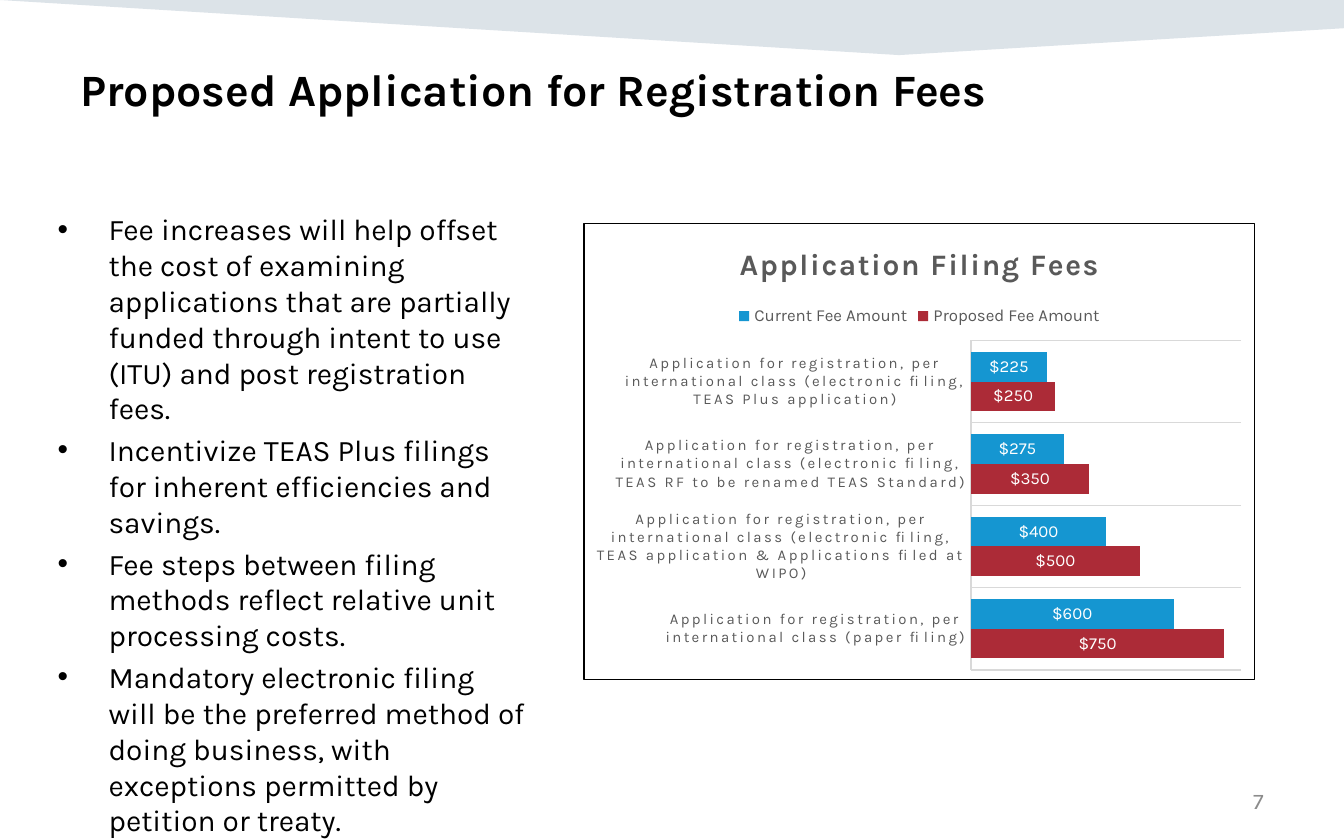
from lxml import etree
from pptx import Presentation
from pptx.chart.data import CategoryChartData
from pptx.dml.color import RGBColor
from pptx.enum.chart import XL_CHART_TYPE, XL_LABEL_POSITION, XL_LEGEND_POSITION, XL_TICK_MARK
from pptx.enum.text import MSO_ANCHOR, PP_ALIGN
from pptx.oxml import parse_xml
from pptx.oxml.ns import nsdecls, qn
from pptx.util import Inches, Pt

FONT = "Karla"
BLACK = RGBColor(0, 0, 0)
WHITE = RGBColor(255, 255, 255)
NAVY = RGBColor(0x16, 0x44, 0x69)
GRAY = RGBColor(0x59, 0x59, 0x59)
PAGE_GRAY = RGBColor(0x8C, 0x8C, 0x8C)
GRID_GRAY = RGBColor(0xD9, 0xD9, 0xD9)
RED = RGBColor(0xAC, 0x2B, 0x37)
BLUE = RGBColor(0x15, 0x96, 0xD1)

TITLE = "Proposed Application for Registration Fees"
PAGE = "7"
POINTS = [
    "Fee increases will help offset the cost of examining applications that are partially "
    "funded through intent to use (ITU) and post registration fees.",
    "Incentivize TEAS Plus filings for inherent efficiencies and savings.",
    "Fee steps between filing methods reflect relative unit processing costs.",
    "Mandatory electronic filing will be the preferred method of doing business, with "
    "exceptions permitted by petition or treaty.",
]
CHART_TITLE = "Application Filing Fees"
CLASS = "Application for registration, per international class "
FILINGS = [
    "(paper filing)",
    "(electronic filing, TEAS application & Applications filed at WIPO)",
    "(electronic filing, TEAS RF to be renamed TEAS Standard)",
    "(electronic filing, TEAS Plus application)",
]
FEES = [
    ("Proposed Fee Amount", RED, (750, 500, 350, 250)),
    ("Current Fee Amount", BLUE, (600, 400, 275, 225)),
]
DOLLARS = '"$"#,##0'
BAND = [(0, 0), (10, 0), (10, 0.21), (6.69, 0.41)]
PLOT_SHARES = {"x": 0.577, "y": 0.256, "w": 0.403, "h": 0.724}


def style(font, size, color, bold=False):
    font.name, font.size, font.bold = FONT, Pt(size), bold
    font.color.rgb = color


def add_text(slide, area, paragraphs, size, color, bold=False):
    frame = slide.shapes.add_textbox(*map(Inches, area)).text_frame
    frame.word_wrap = True
    for index, words in enumerate(paragraphs):
        paragraph = frame.paragraphs[0] if index == 0 else frame.add_paragraph()
        run = paragraph.add_run()
        run.text = words
        style(run.font, size, color, bold)
    return frame


def add_band(slide):
    builder = slide.shapes.build_freeform(*map(Inches, BAND[0]), scale=1.0)
    builder.add_line_segments([(Inches(x), Inches(y)) for x, y in BAND[1:]], close=True)
    band = builder.convert_to_shape()
    band.shadow.inherit = False
    band.line.fill.background()
    band.fill.solid()
    band.fill.fore_color.rgb = NAVY
    color = band.fill._xPr.find(qn("a:solidFill"))[0]
    etree.SubElement(color, qn("a:alpha")).set("val", "15000")


def add_bullets(frame):
    indent = Inches(0.38)
    for index, paragraph in enumerate(frame.paragraphs):
        props = paragraph._p.get_or_add_pPr()
        props.set("marL", str(indent))
        props.set("indent", str(-indent))
        etree.SubElement(props, qn("a:buFont")).set("typeface", "Arial")
        etree.SubElement(props, qn("a:buChar")).set("char", "•")
        if index:
            paragraph.space_before = Pt(3.2)


def set_plot_area(chart):
    """Fix the inner plot area at shares of the chart's size."""
    plot_area = chart._chartSpace.chart.plotArea
    for layout in plot_area.findall(qn("c:layout")):
        plot_area.remove(layout)
    modes = '<c:xMode val="edge"/><c:yMode val="edge"/>'
    sizes = "".join(f'<c:{key} val="{share}"/>' for key, share in PLOT_SHARES.items())
    plot_area.insert(0, parse_xml(
        f'<c:layout {nsdecls("c")}><c:manualLayout><c:layoutTarget val="inner"/>'
        f"{modes}{sizes}</c:manualLayout></c:layout>"))


def add_border(chart):
    border = parse_xml(
        f'<c:spPr {nsdecls("c", "a")}><a:noFill/><a:ln w="{Pt(0.75)}"><a:solidFill>'
        f'<a:srgbClr val="{BLACK}"/></a:solidFill></a:ln></c:spPr>')
    chart._chartSpace.chart.addnext(border)


def add_fee_chart(slide):
    data = CategoryChartData(number_format=DOLLARS)
    data.categories = [CLASS + filing for filing in FILINGS]
    for name, _, amounts in FEES:
        data.add_series(name, amounts)
    chart = slide.shapes.add_chart(
        XL_CHART_TYPE.BAR_CLUSTERED, *map(Inches, (4.34, 1.66, 5, 3.4)), data).chart
    style(chart.font, 10, BLACK)

    chart.has_title = True
    heading = chart.chart_title.text_frame.paragraphs[0].add_run()
    heading.text = CHART_TITLE
    style(heading.font, 16, GRAY, bold=True)
    heading.font._element.set("spc", "100")
    chart.chart_title.include_in_layout = False

    chart.has_legend = True
    chart.legend.position = XL_LEGEND_POSITION.TOP
    chart.legend.include_in_layout = False
    style(chart.legend.font, 9, GRAY)

    filings = chart.category_axis
    filings.major_tick_mark = filings.minor_tick_mark = XL_TICK_MARK.NONE
    filings.has_major_gridlines = True
    for line in (filings.format.line, filings.major_gridlines.format.line):
        line.color.rgb, line.width = GRID_GRAY, Pt(0.75)
    style(filings.tick_labels.font, 8, GRAY)
    filings.tick_labels.font._element.set("spc", "120")

    amounts_axis = chart.value_axis
    amounts_axis.has_major_gridlines = False
    amounts_axis.minimum_scale, amounts_axis.maximum_scale = 0, 800
    amounts_axis.visible = False

    plot = chart.plots[0]
    plot.gap_width, plot.overlap, plot.vary_by_categories = 79, 0, False
    for series, (_, color, _) in zip(plot.series, FEES):
        series.format.fill.solid()
        series.format.fill.fore_color.rgb = color
        labels = series.data_labels
        labels.show_value = True
        labels.position = XL_LABEL_POSITION.CENTER
        labels.number_format, labels.number_format_is_linked = DOLLARS, False
        style(labels.font, 9, WHITE)
    set_plot_area(chart)
    add_border(chart)


def main():
    deck = Presentation()
    deck.slide_width, deck.slide_height = Inches(10), Inches(6.25)
    slide = deck.slides.add_slide(deck.slide_layouts[6])
    add_band(slide)
    add_text(slide, (0.5, 0.41, 9, 0.51), [TITLE], 24, BLACK, bold=True)
    page = add_text(slide, (7.17, 5.79, 2.33, 0.33), [PAGE], 12, PAGE_GRAY)
    page.vertical_anchor = MSO_ANCHOR.MIDDLE
    page.paragraphs[0].alignment = PP_ALIGN.RIGHT
    add_bullets(add_text(slide, (0.33, 1.52, 3.68, 4.35), POINTS, 16, BLACK))
    add_fee_chart(slide)
    deck.save("out.pptx")


if __name__ == "__main__":
    main()
